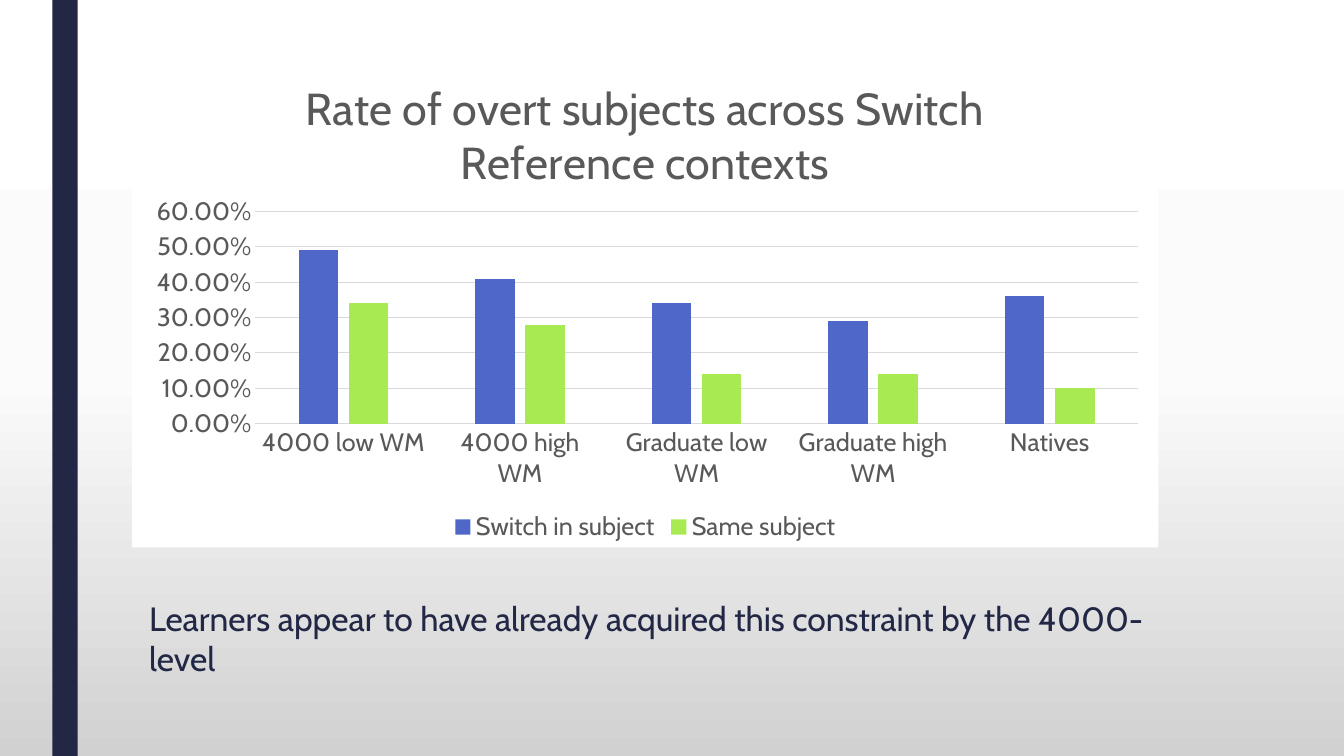
from copy import deepcopy

from lxml import etree
from pptx import Presentation
from pptx import util as u
from pptx.chart.data import CategoryChartData
from pptx.dml.color import RGBColor
from pptx.enum import chart as charts, shapes, text
from pptx.oxml import parse_xml
from pptx.oxml.ns import nsdecls, qn

WIDTH, HEIGHT = u.Inches(13.33), u.Inches(7.5)
FONT, NAVY, GREY, RULE = "Cabin", "212745", "595959", "D9D9D9"
BACKGROUND = [(0, "FFFFFF"), (0.5, "FBFBFB"), (1, "D1D1D1")]
GROUPS = ["4000 low WM", "4000 high WM", "Graduate low WM", "Graduate high WM", "Natives"]
RATES = [
    ("Switch in subject", "4E67C8", [0.49, 0.41, 0.34, 0.29, 0.36]),
    ("Same subject", "A7EA52", [0.34, 0.28, 0.14, 0.14, 0.1]),
]
PLOT_AREA = {"x": 0.12, "y": 0.32, "w": 0.86, "h": 0.43}


def color(value):
    """Turn a hex string into a colour."""
    return RGBColor.from_string(value)


def apply(target, formats):
    """Set every attribute in a dict of format values."""
    for name, value in formats.items():
        setattr(target, name, value)


def style_font(font, size, value):
    """Give a font the slide's typeface, a size and a colour."""
    apply(font, {"name": FONT, "size": u.Pt(size), "bold": False})
    font.color.rgb = color(value)


def style_line(line):
    """Draw a line as a thin light rule."""
    line.color.rgb = color(RULE)
    line.width = u.Pt(0.75)


def paint_background(slide):
    """Fill the slide with a vertical gradient."""
    fill = slide.background.fill
    fill.gradient()
    fill.gradient_angle = 270
    stop_list = slide._element.find(".//" + qn("a:gsLst"))
    stop_list.append(deepcopy(stop_list[0]))
    for stop, (position, value) in zip(fill.gradient_stops, BACKGROUND):
        stop.position = position
        stop.color.rgb = color(value)


def add_bar(slide, left, width):
    """Add the full-height side bar."""
    bar = slide.shapes.add_shape(
        shapes.MSO_SHAPE.RECTANGLE, u.Inches(left), 0, u.Inches(width), HEIGHT)
    bar.shadow.inherit = False
    bar.fill.solid()
    bar.fill.fore_color.rgb = color(NAVY)
    bar.line.fill.background()


def place_plot(chart):
    """Fix the inner plot area and paint the chart white."""
    plot_area = chart._chartSpace.find(".//" + qn("c:plotArea"))
    for layout in plot_area.findall(qn("c:layout")):
        plot_area.remove(layout)
    layout = etree.Element(qn("c:layout"))
    manual = etree.SubElement(layout, qn("c:manualLayout"))
    settings = [("layoutTarget", "inner"), ("xMode", "edge"), ("yMode", "edge")]
    for name, value in settings + list(PLOT_AREA.items()):
        etree.SubElement(manual, qn("c:" + name)).set("val", str(value))
    plot_area.insert(0, layout)
    chart._chartSpace.find(qn("c:chart")).addnext(parse_xml(
        f'<c:spPr {nsdecls("c", "a")}><a:solidFill><a:srgbClr val="FFFFFF"/>'
        '</a:solidFill><a:ln><a:noFill/></a:ln></c:spPr>'))


def style_axes(chart):
    """Format both axes and the gridlines."""
    for axis in (chart.category_axis, chart.value_axis):
        apply(axis, {"major_tick_mark": charts.XL_TICK_MARK.NONE,
                     "minor_tick_mark": charts.XL_TICK_MARK.NONE})
        style_font(axis.tick_labels.font, 18, GREY)
    style_line(chart.category_axis.format.line)
    apply(chart.value_axis, {"minimum_scale": 0, "maximum_scale": 0.6,
                             "major_unit": 0.1, "has_major_gridlines": True})
    chart.value_axis.format.line.fill.background()
    style_line(chart.value_axis.major_gridlines.format.line)
    apply(chart.value_axis.tick_labels,
          {"number_format": "0.00%", "number_format_is_linked": False})


def add_rate_chart(slide, title, *box):
    """Add the clustered columns with title and legend."""
    data = CategoryChartData(number_format="0.00%")
    data.categories = GROUPS
    for name, _, values in RATES:
        data.add_series(name, values)
    chart = slide.shapes.add_chart(
        charts.XL_CHART_TYPE.COLUMN_CLUSTERED, *map(u.Inches, box), data).chart
    style_font(chart.font, 10, "000000")
    apply(chart, {"has_title": True, "has_legend": True})
    chart.chart_title.include_in_layout = False
    chart.chart_title.text_frame.text = title
    style_font(chart.chart_title.text_frame.paragraphs[0].runs[0].font, 32, GREY)
    apply(chart.legend, {"position": charts.XL_LEGEND_POSITION.BOTTOM,
                         "include_in_layout": False})
    style_font(chart.legend.font, 18, GREY)
    plot = chart.plots[0]
    apply(plot, {"gap_width": 219, "overlap": -27, "vary_by_categories": False})
    for series, (_, value, _) in zip(plot.series, RATES):
        series.format.fill.solid()
        series.format.fill.fore_color.rgb = color(value)
    style_axes(chart)
    place_plot(chart)


def add_text(slide, words, *box):
    """Add a wrapped text box."""
    frame = slide.shapes.add_textbox(*map(u.Inches, box)).text_frame
    apply(frame, {"word_wrap": True, "auto_size": text.MSO_AUTO_SIZE.SHAPE_TO_FIT_TEXT})
    run = frame.paragraphs[0].add_run()
    run.text = words
    style_font(run.font, 24, NAVY)


def main():
    """Build and save the slide."""
    presentation = Presentation()
    apply(presentation, {"slide_width": WIDTH, "slide_height": HEIGHT})
    slide = presentation.slides.add_slide(presentation.slide_layouts[6])
    paint_background(slide)
    add_bar(slide, 0.52, 0.25)
    add_rate_chart(slide, "Rate of overt subjects across Switch Reference contexts",
                   1.31, 0.53, 10.18, 4.9)
    add_text(slide, "Learners appear to have already acquired this constraint by the 4000-level",
             1.38, 5.88, 10.19, 0.91)
    presentation.save("out.pptx")


if __name__ == "__main__":
    main()
